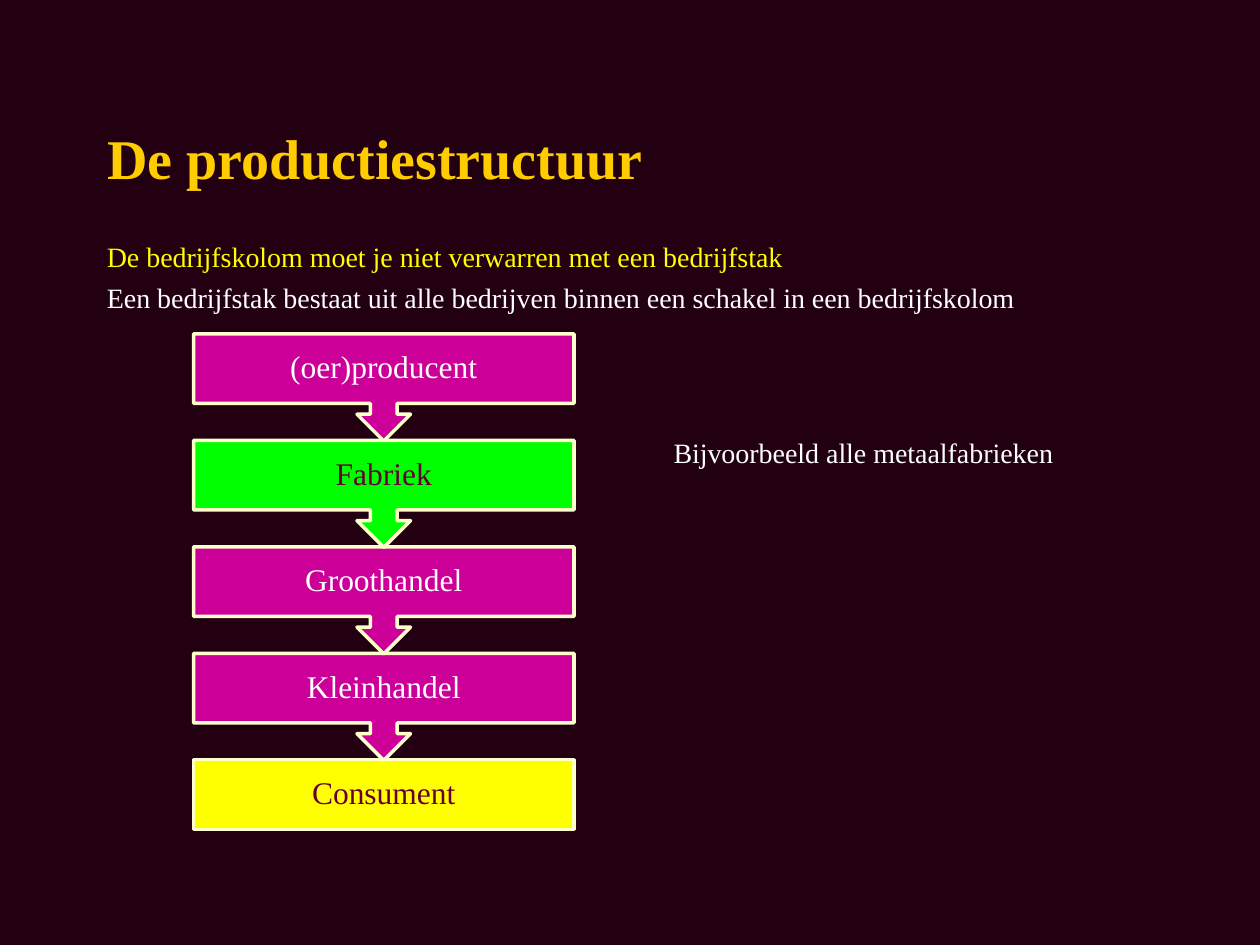
"""Build a slide that shows the links of a production chain."""
from collections import namedtuple

from pptx import Presentation
from pptx.dml.color import RGBColor
from pptx.enum.shapes import MSO_SHAPE as Preset
from pptx.enum.text import MSO_ANCHOR as Anchor, PP_ALIGN as Align
from pptx.util import Pt

Theme = namedtuple(
    "Theme",
    "font background title accent light dark outline link factory consumer "
    "title_size body_size link_size",
)
theme = Theme(
    font="Times New Roman",
    background=RGBColor.from_string("220011"),
    title=RGBColor.from_string("FFCC00"),
    accent=RGBColor.from_string("FFFF00"),
    light=RGBColor.from_string("FFFFFF"),
    dark=RGBColor.from_string("660033"),
    outline=RGBColor.from_string("FFFFCC"),
    link=RGBColor.from_string("CC0099"),
    factory=RGBColor.from_string("00FF00"),
    consumer=RGBColor.from_string("FFFF00"),
    title_size=Pt(32),
    body_size=Pt(16),
    link_size=Pt(18),
)


def write(paragraph, text, *, size, color, bold=False, align=Align.LEFT,
          space_after=0, line_spacing=1.0):
    """Add formatted text to a paragraph."""
    paragraph.alignment = align
    paragraph.space_before = Pt(0)
    paragraph.space_after = Pt(space_after)
    paragraph.line_spacing = line_spacing
    run = paragraph.add_run()
    run.text = text
    run.font.name = theme.font
    run.font.size = size
    run.font.bold = bold
    run.font.color.rgb = color


presentation = Presentation()
presentation.slide_width, presentation.slide_height = Pt(720), Pt(540)
slide = presentation.slides.add_slide(presentation.slide_layouts[5])
slide.background.fill.solid()
slide.background.fill.fore_color.rgb = theme.background

title = slide.shapes.title
title.left, title.top, title.width, title.height = Pt(54), Pt(60), Pt(612), Pt(60)
title.text_frame.vertical_anchor = Anchor.MIDDLE
write(title.text_frame.paragraphs[0], "De productiestructuur",
      size=theme.title_size, color=theme.title, bold=True)

notes = [
    (54, 133.5, 606, 50, [
        ("De bedrijfskolom moet je niet verwarren met een bedrijfstak", theme.accent),
        ("Een bedrijfstak bestaat uit alle bedrijven binnen een schakel in een bedrijfskolom",
         theme.light),
    ]),
    (377.8, 245.5, 282, 26, [("Bijvoorbeeld alle metaalfabrieken", theme.light)]),
]
for left, top, width, height, lines in notes:
    frame = slide.shapes.add_textbox(Pt(left), Pt(top), Pt(width), Pt(height)).text_frame
    frame.word_wrap = True
    for index, (text, color) in enumerate(lines):
        paragraph = frame.add_paragraph() if index else frame.paragraphs[0]
        write(paragraph, text, size=theme.body_size, color=color, space_after=4)

callout, box = (Preset.DOWN_ARROW_CALLOUT, 61.2), (Preset.RECTANGLE, 39.8)
links = [
    ("(oer)producent", callout, theme.link, theme.light),
    ("Fabriek", callout, theme.factory, theme.dark),
    ("Groothandel", callout, theme.link, theme.light),
    ("Kleinhandel", callout, theme.link, theme.light),
    ("Consument", box, theme.consumer, theme.dark),
]
chain_left, chain_top, link_width, link_pitch = 110.6, 190.8, 217.4, 60.84
for index, (text, (preset, height), fill, color) in reversed(list(enumerate(links))):
    shape = slide.shapes.add_shape(
        preset, Pt(chain_left), Pt(chain_top + index * link_pitch),
        Pt(link_width), Pt(height))
    shape.shadow.inherit = False
    shape.fill.solid()
    shape.fill.fore_color.rgb = fill
    shape.line.color.rgb = theme.outline
    shape.line.width = Pt(2)
    frame = shape.text_frame
    frame.word_wrap = True
    frame.vertical_anchor = Anchor.MIDDLE
    frame.margin_left = frame.margin_right = Pt(10)
    frame.margin_top = frame.margin_bottom = Pt(10)
    write(frame.paragraphs[0], text, size=theme.link_size, color=color,
          align=Align.CENTER, line_spacing=0.9)

presentation.save("out.pptx")
